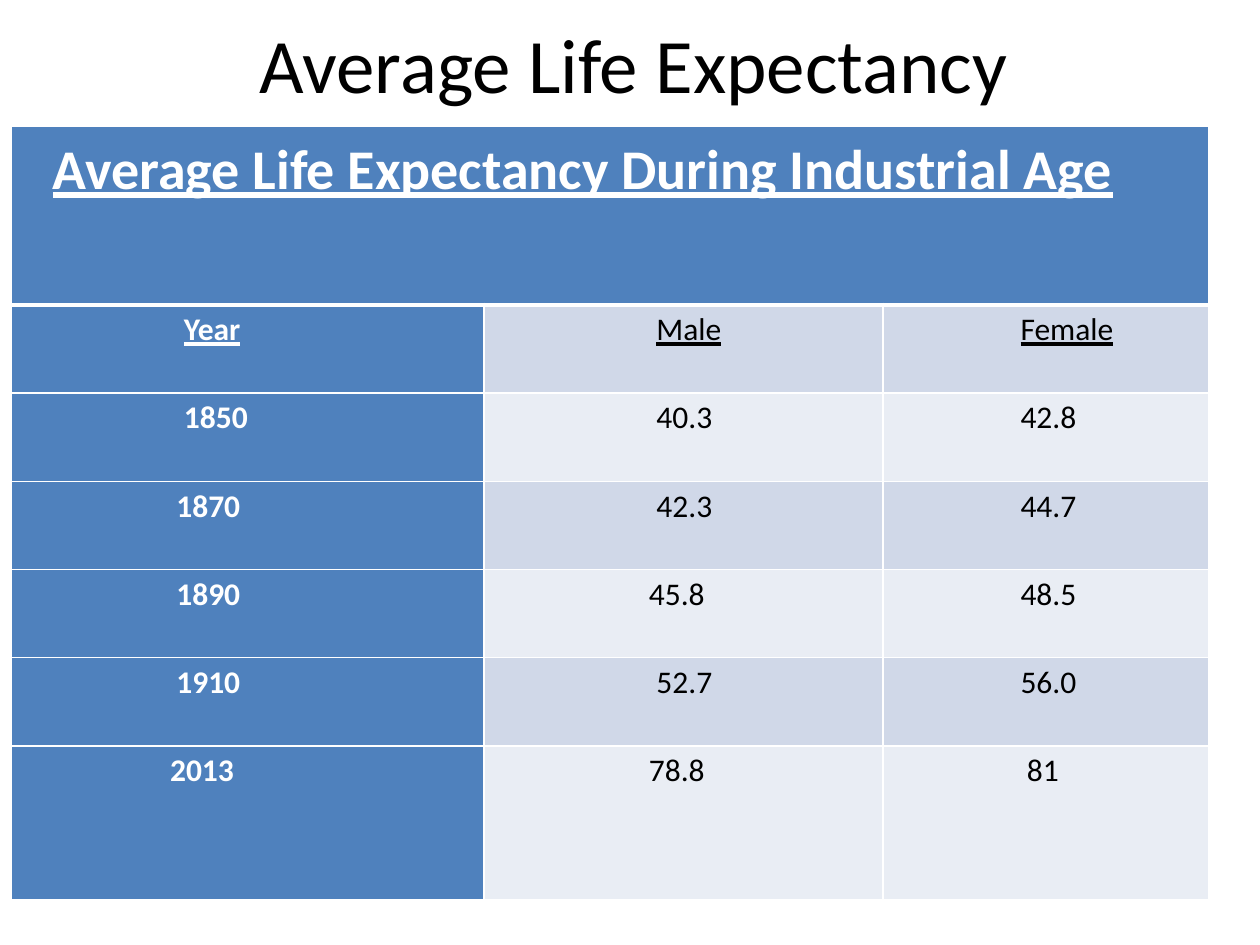
from lxml import etree
from pptx import Presentation
from pptx.dml.color import RGBColor
from pptx.enum.text import MSO_ANCHOR, PP_ALIGN
from pptx.oxml.ns import qn
from pptx.util import Inches, Pt

WHITE, BLACK, BLUE = "FFFFFF", "000000", "4F81BD"
BANDS = ["D0D8E8", "E9EDF4"]
COLUMN_WIDTHS = [3.75, 3.17, 2.58]
ROW_HEIGHTS = [1.42] + [0.7] * 5 + [1.22]
HEADING = "Average Life Expectancy During Industrial Age"
# Each entry is the text and its indent in inches.
ROWS = [
    [(HEADING, 0.26), ("", 0), ("", 0)],
    [("Year", 1.3), ("Male", 1.3), ("Female", 1.02)],
    [("1850", 1.3), ("40.3", 1.3), ("42.8", 1.02)],
    [("1870", 1.24), ("42.3", 1.3), ("44.7", 1.02)],
    [("1890", 1.24), ("45.8", 1.24), ("48.5", 1.02)],
    [("1910", 1.24), ("52.7", 1.3), ("56.0", 1.02)],
    [("2013", 1.19), ("78.8", 1.24), ("81", 1.07)],
]


def rgb(value):
    return RGBColor.from_string(value)


def add_borders(cell, top, bottom):
    """Draw white borders, with the top and bottom widths in points."""
    properties = cell._tc.get_or_add_tcPr()
    sides = [("lnL", 1), ("lnR", 1), ("lnT", top), ("lnB", bottom)]
    for position, (side, width) in enumerate(sides):
        line = etree.Element(qn(f"a:{side}"), w=str(Pt(width)))
        fill = etree.SubElement(line, qn("a:solidFill"))
        etree.SubElement(fill, qn("a:srgbClr"), val=WHITE)
        properties.insert(position, line)


presentation = Presentation()
presentation.slide_width, presentation.slide_height = Inches(10), Inches(7.5)
slide = presentation.slides.add_slide(presentation.slide_layouts[6])

title = slide.shapes.add_textbox(Inches(0.5), 0, Inches(9), Inches(1))
title_frame = title.text_frame
title_frame.word_wrap = True
title_frame.vertical_anchor = MSO_ANCHOR.MIDDLE
title_frame.margin_left = Inches(0.16)
paragraph = title_frame.paragraphs[0]
paragraph.text = "Average Life Expectancy"
paragraph.alignment = PP_ALIGN.CENTER
paragraph.font.name = "Calibri"
paragraph.font.size = Pt(44)
paragraph.font.color.rgb = rgb(BLACK)

table = slide.shapes.add_table(
    len(ROWS), len(COLUMN_WIDTHS), Inches(0.09), Inches(1),
    Inches(sum(COLUMN_WIDTHS)), Inches(sum(ROW_HEIGHTS))).table
for column, width in zip(table.columns, COLUMN_WIDTHS):
    column.width = Inches(width)
for row, height in zip(table.rows, ROW_HEIGHTS):
    row.height = Inches(height)
table.cell(0, 0).merge(table.cell(0, 2))

for row_index, entries in enumerate(ROWS):
    for column_index, (text, indent) in enumerate(entries):
        cell = table.cell(row_index, column_index)
        is_header = row_index == 0 or column_index == 0
        cell.fill.solid()
        cell.fill.fore_color.rgb = rgb(
            BLUE if is_header else BANDS[(row_index - 1) % 2])
        add_borders(cell, top=3 if row_index == 1 else 1,
                    bottom=3 if row_index == 0 else 1)
        cell.margin_left = Inches(0.07 + indent)
        cell.margin_right = Inches(0.07)
        cell.margin_top = cell.margin_bottom = 0
        paragraph = cell.text_frame.paragraphs[0]
        paragraph.text = text
        paragraph.line_spacing = 1.15
        font = paragraph.font
        font.name = "Calibri"
        font.size = Pt(32 if row_index == 0 else 18)
        font.bold = is_header
        font.underline = row_index < 2
        font.color.rgb = rgb(WHITE if is_header else BLACK)

presentation.save("out.pptx")
